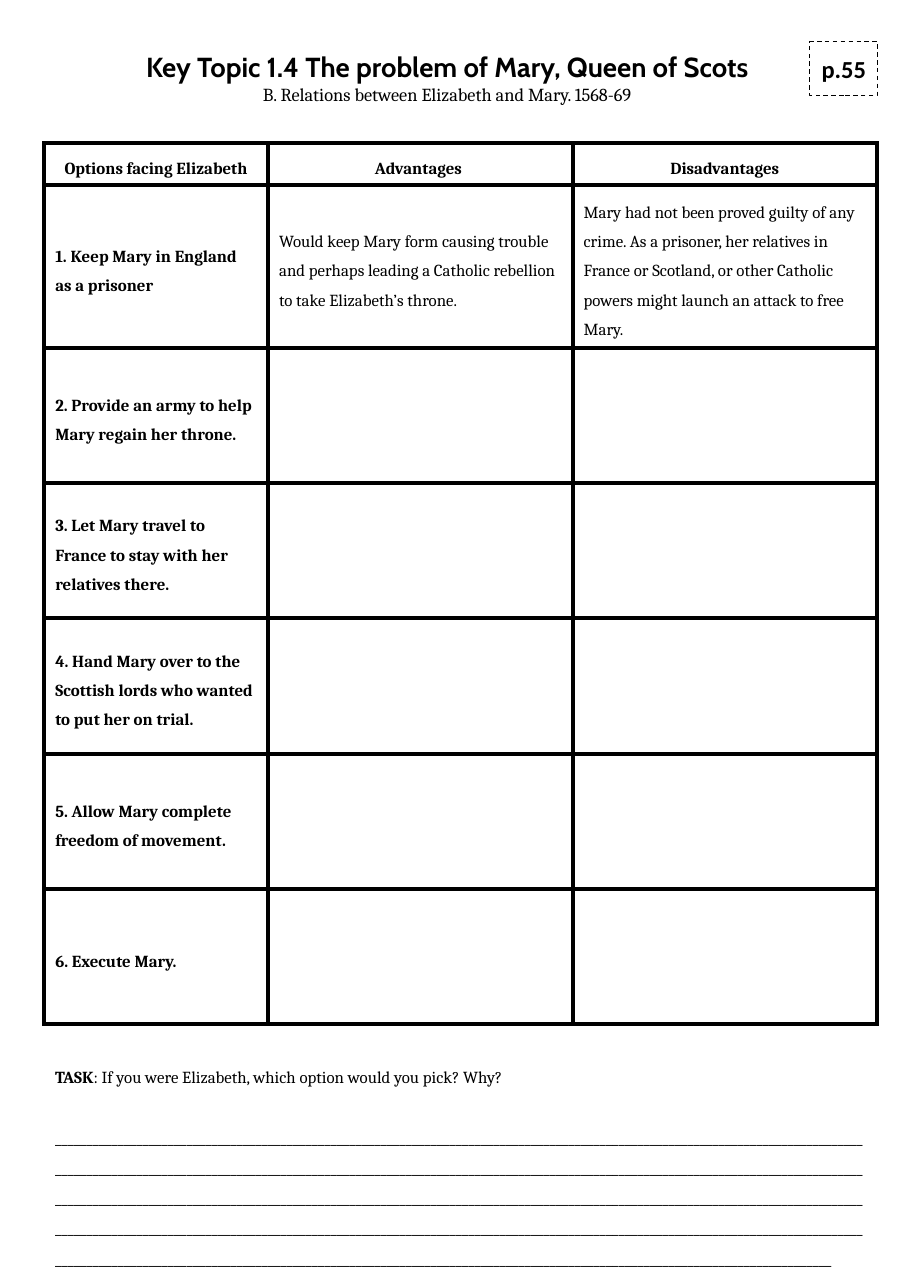
from lxml.etree import SubElement as Sub
from pptx import Presentation
from pptx.dml.color import RGBColor
from pptx.enum.dml import MSO_LINE_DASH_STYLE as Dash
from pptx.enum.shapes import MSO_SHAPE as Shape
from pptx.enum.text import MSO_ANCHOR as Anchor, PP_ALIGN as Align
from pptx.oxml.ns import qn
from pptx.util import Cm, Pt

BLACK = RGBColor(0, 0, 0)
WHITE = RGBColor(255, 255, 255)

BODY = dict(name="Cambria", size=Pt(11), bold=False)
BOLD = BODY | dict(bold=True)
HEAD = dict(name="Cabin", size=Pt(18), bold=True)
SUBHEAD = BODY | dict(size=Pt(12))
PAGE = dict(name="Calibri", size=Pt(16), bold=True)

LEFT = dict(alignment=Align.LEFT, line_spacing=1.5)
MID = dict(alignment=Align.CENTER, line_spacing=1.5)
TIGHT = dict(alignment=Align.CENTER, line_spacing=1.0)
LINES = LEFT | dict(space_before=Pt(20))

INSET = {f"margin_{side}": Cm(0.25)
         for side in ("left", "right", "top", "bottom")}
FRAME = INSET | dict(word_wrap=True, vertical_anchor=Anchor.MIDDLE)
TASK = dict(word_wrap=True, vertical_anchor=Anchor.TOP)

TITLES = ("Options facing Elizabeth", "Advantages ", "Disadvantages")
OPTIONS = (
    "1. Keep Mary in England as a prisoner",
    "2. Provide an army to help Mary regain her throne.",
    "3. Let Mary travel to France to stay with her relatives there.",
    "4. Hand Mary over to the Scottish lords who wanted to put her on trial.",
    "5. Allow Mary complete freedom of movement.",
    "6. Execute Mary.",
)
PRO = ("Would keep Mary form causing trouble and perhaps leading "
       "a Catholic rebellion to take Elizabeth’s throne.")
CON = ("Mary had not been proved guilty of any crime. As a prisoner, "
       "her relatives in France or Scotland, or other Catholic powers "
       "might launch an attack to free Mary.")


def apply(target, values):
    for key, value in values.items():
        setattr(target, key, value)


class Sheet:
    def __init__(self, slide, ink):
        self.shapes = slide.shapes
        self.ink = ink

    def put(self, frame, *paras):
        for i, (form, runs) in enumerate(paras):
            para = frame.add_paragraph() if i else frame.paragraphs[0]
            apply(para, form)
            for text, font in runs:
                run = para.add_run()
                run.text = text
                apply(run.font, font)
                run.font.color.rgb = self.ink

    def text(self, box, frame, *paras):
        item = self.shapes.add_textbox(*map(Cm, box))
        apply(item.text_frame, frame)
        self.put(item.text_frame, *paras)

    def badge(self, box, text):
        item = self.shapes.add_shape(Shape.RECTANGLE, *map(Cm, box))
        item.shadow.inherit = False
        item.fill.solid()
        item.fill.fore_color.rgb = WHITE
        item.line.color.rgb = self.ink
        apply(item.line, dict(width=Pt(0.75), dash_style=Dash.DASH))
        apply(item.text_frame, FRAME | dict(word_wrap=False))
        self.put(item.text_frame, (TIGHT, [(text, PAGE)]))

    def border(self, cell):
        props = cell._tc.get_or_add_tcPr()
        for side in "LRTB":
            line = Sub(props, qn(f"a:ln{side}"), w=str(Pt(3)))
            fill = Sub(line, qn("a:solidFill"))
            Sub(fill, qn("a:srgbClr"), val=str(self.ink))

    def table(self, box, cols, rows, data):
        item = self.shapes.add_table(len(rows), len(cols), *map(Cm, box))
        grid = item.table
        apply(grid, dict(first_row=False, horz_banding=False))
        for col, width in zip(grid.columns, cols):
            col.width = Cm(width)
        for row, height in zip(grid.rows, rows):
            row.height = Cm(height)
        for r, texts in enumerate(data):
            for c, text in enumerate(texts):
                cell = grid.cell(r, c)
                cell.vertical_anchor = Anchor.MIDDLE
                self.border(cell)
                cell.fill.background()
                if text:
                    form = LEFT if r else MID
                    font = BODY if r and c else BOLD
                    self.put(cell.text_frame, (form, [(text, font)]))


def main():
    deck = Presentation()
    apply(deck, dict(slide_width=Cm(21), slide_height=Cm(29.7)))
    sheet = Sheet(deck.slides.add_slide(deck.slide_layouts[6]), BLACK)

    sheet.text(
        (1.02, 24.23, 19.2, 5.1), TASK,
        (LEFT, [("TASK", BOLD),
                (": If you were Elizabeth, which option would you pick? Why?",
                 BODY)]),
        (LINES, [("_" * 640, BODY)]))
    sheet.text(
        (1.96, 0.94, 16.7, 1.7), FRAME,
        (TIGHT, [("Key Topic 1.4 The problem of Mary, Queen of Scots", HEAD)]),
        (TIGHT, [("B. Relations between Elizabeth and Mary. 1568-69",
                  SUBHEAD)]))
    sheet.badge((18.67, 0.96, 1.56, 1.24), "p.55")

    notes = [(PRO, CON)] + [("", "")] * (len(OPTIONS) - 1)
    data = [TITLES] + [(name, *note) for name, note in zip(OPTIONS, notes)]
    sheet.table((1.02, 3.3, 19.2, 20.27), (5.16, 7.02, 7.02),
                (0.97, 3.38, *[3.12] * 5), data)
    deck.save("out.pptx")


if __name__ == "__main__":
    main()
